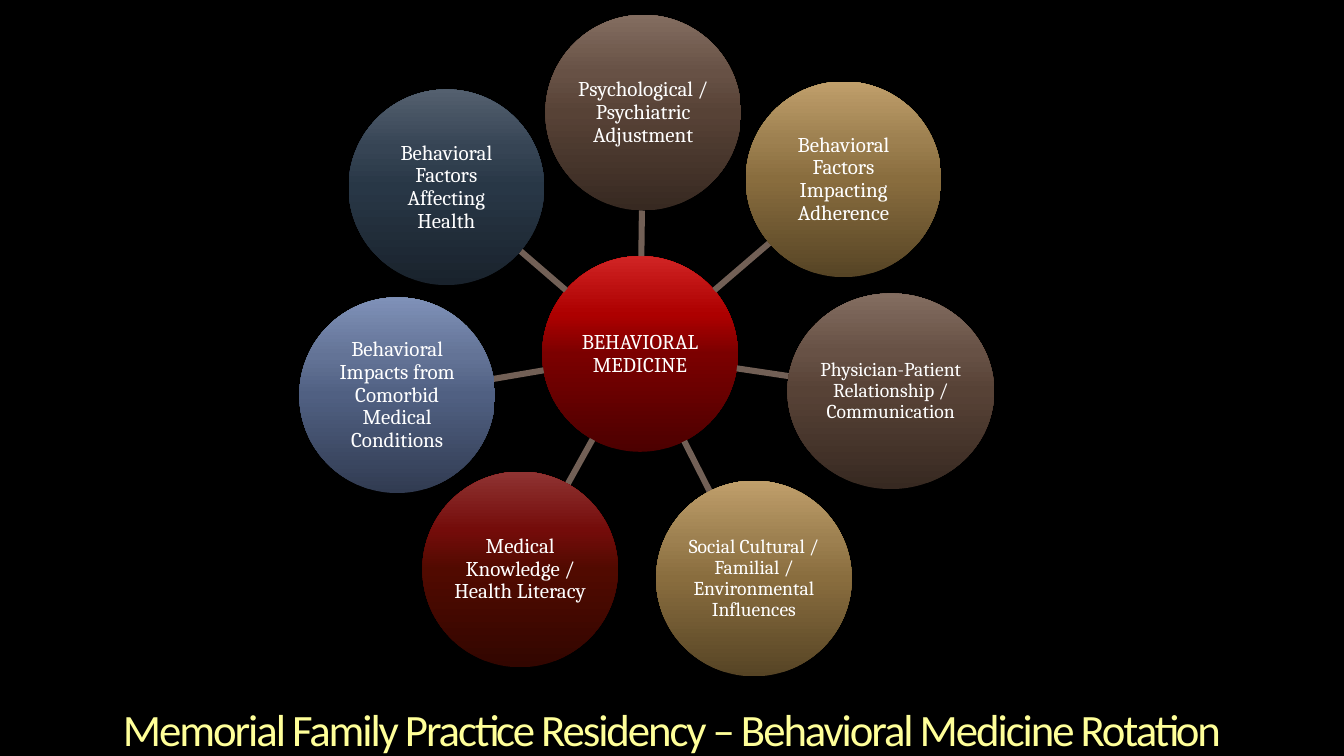
from math import hypot

from lxml.etree import SubElement
from pptx import Presentation
from pptx.dml.color import RGBColor
from pptx.enum.shapes import MSO_CONNECTOR, MSO_SHAPE
from pptx.enum.text import MSO_ANCHOR, MSO_AUTO_SIZE, PP_ALIGN
from pptx.oxml.ns import qn
from pptx.util import Cm, Pt

TITLE = "Memorial Family Practice Residency – Behavioral Medicine Rotation"
GLOW = [(0, "FFFFB9"), (36, "FFFF99"), (86, "F6AE1E")]
SIZE = 4.93
STOPS = (0, 50, 70, 100)
SHADES = {
    "red": ("4C0000", "7B0000", "AD0000", "D02424"),
    "brown": ("372921", "574236", "675145", "836D60"),
    "gold": ("564425", "896D3E", "9D8050", "C09F6B"),
    "blue": ("313B51", "506082", "637396", "7F91B8"),
    "slate": ("19222C", "283746", "364454", "54606F"),
    "maroon": ("320600", "510A00", "740C0A", "8F3332"),
}
# text, centre x, centre y, width, shade, font size
HUB = ("BEHAVIORAL MEDICINE", 16.13, 8.92, SIZE, "red", 15)
TOPICS = [
    ("Psychological / Psychiatric Adjustment", 16.21, 2.84, SIZE, "brown", 15),
    ("Behavioral Factors Impacting Adherence", 21.26, 4.52, SIZE, "gold", 15),
    ("Behavioral Impacts from Comorbid Medical Conditions", 10.01, 9.96, SIZE, "blue", 15),
    ("Behavioral Factors Affecting Health", 11.25, 4.72, SIZE, "slate", 15),
    ("Medical Knowledge / Health Literacy", 13.11, 14.35, SIZE, "maroon", 15),
    ("Physician-Patient Relationship / Communication", 22.45, 9.86, 5.21, "brown", 14),
    ("Social Cultural / Familial / Environmental Influences", 19.0, 14.58, SIZE, "gold", 14),
]


def color(code):
    return RGBColor.from_string(code)


def shade(fill, holder, stops, angle):
    """Fill with a linear gradient of any number of stops."""
    fill.gradient()
    grad = holder.find(qn("a:gradFill"))
    for part in list(grad):
        grad.remove(part)
    items = SubElement(grad, qn("a:gsLst"))
    for pos, code in stops:
        stop = SubElement(items, qn("a:gs"), pos=str(pos * 1000))
        SubElement(stop, qn("a:srgbClr"), val=code)
    SubElement(grad, qn("a:lin"), ang=str(angle * 60000), scaled="0")


def inset(frame, gap):
    frame.margin_left = frame.margin_right = Cm(gap)
    frame.margin_top = frame.margin_bottom = Cm(gap)
    frame.word_wrap = True


def write(frame, text, font, size):
    frame.text = text
    para = frame.paragraphs[0]
    para.alignment = PP_ALIGN.CENTER
    para.line_spacing = 0.9
    run = para.runs[0]
    run.font.name = font
    run.font.size = Pt(size)
    return run


def circle(slide, text, x, y, width, tone, size):
    shape = slide.shapes.add_shape(
        MSO_SHAPE.OVAL, Cm(x - width / 2), Cm(y - SIZE / 2), Cm(width), Cm(SIZE))
    shape.shadow.inherit = False
    shape.line.fill.background()
    shade(shape.fill, shape.element.spPr, zip(STOPS, SHADES[tone]), 270)
    frame = shape.text_frame
    inset(frame, 0.03)
    frame.vertical_anchor = MSO_ANCHOR.MIDDLE
    write(frame, text, "Cambria", size).font.color.rgb = color("FFFFFF")


def spoke(slide, x, y, width):
    """Join the rim of the hub to the rim of a topic."""
    hx, hy = HUB[1:3]
    dx, dy = x - hx, y - hy
    start = SIZE / 2 / hypot(dx, dy)
    end = 1 - 1 / hypot(dx / (width / 2), dy / (SIZE / 2))
    line = slide.shapes.add_connector(
        MSO_CONNECTOR.STRAIGHT, Cm(hx + dx * start), Cm(hy + dy * start),
        Cm(hx + dx * end), Cm(hy + dy * end))
    line.line.color.rgb = color("726056")
    line.line.width = Pt(4.33)
    SubElement(line.element.spPr, qn("a:effectLst"))


def head(slide, width):
    title = slide.shapes.title
    title.left, title.top = Cm(0), Cm(17.83)
    title.width, title.height = width, Cm(1.22)
    frame = title.text_frame
    inset(frame, 0)
    frame.vertical_anchor = MSO_ANCHOR.TOP
    frame.auto_size = MSO_AUTO_SIZE.SHAPE_TO_FIT_TEXT
    run = write(frame, TITLE, "Calibri", 32)
    props = run.font.fill
    look = run._r.get_or_add_rPr()
    look.set("spc", "-150")
    shade(props, look, GLOW, 90)


def main():
    deck = Presentation()
    deck.slide_width, deck.slide_height = Cm(33.87), Cm(19.05)
    slide = deck.slides.add_slide(deck.slide_layouts[5])
    back = slide.background.fill
    back.solid()
    back.fore_color.rgb = color("000000")
    head(slide, deck.slide_width)
    circle(slide, *HUB)
    for topic in TOPICS:
        spoke(slide, *topic[1:4])
        circle(slide, *topic)
    deck.save("out.pptx")


if __name__ == "__main__":
    main()
